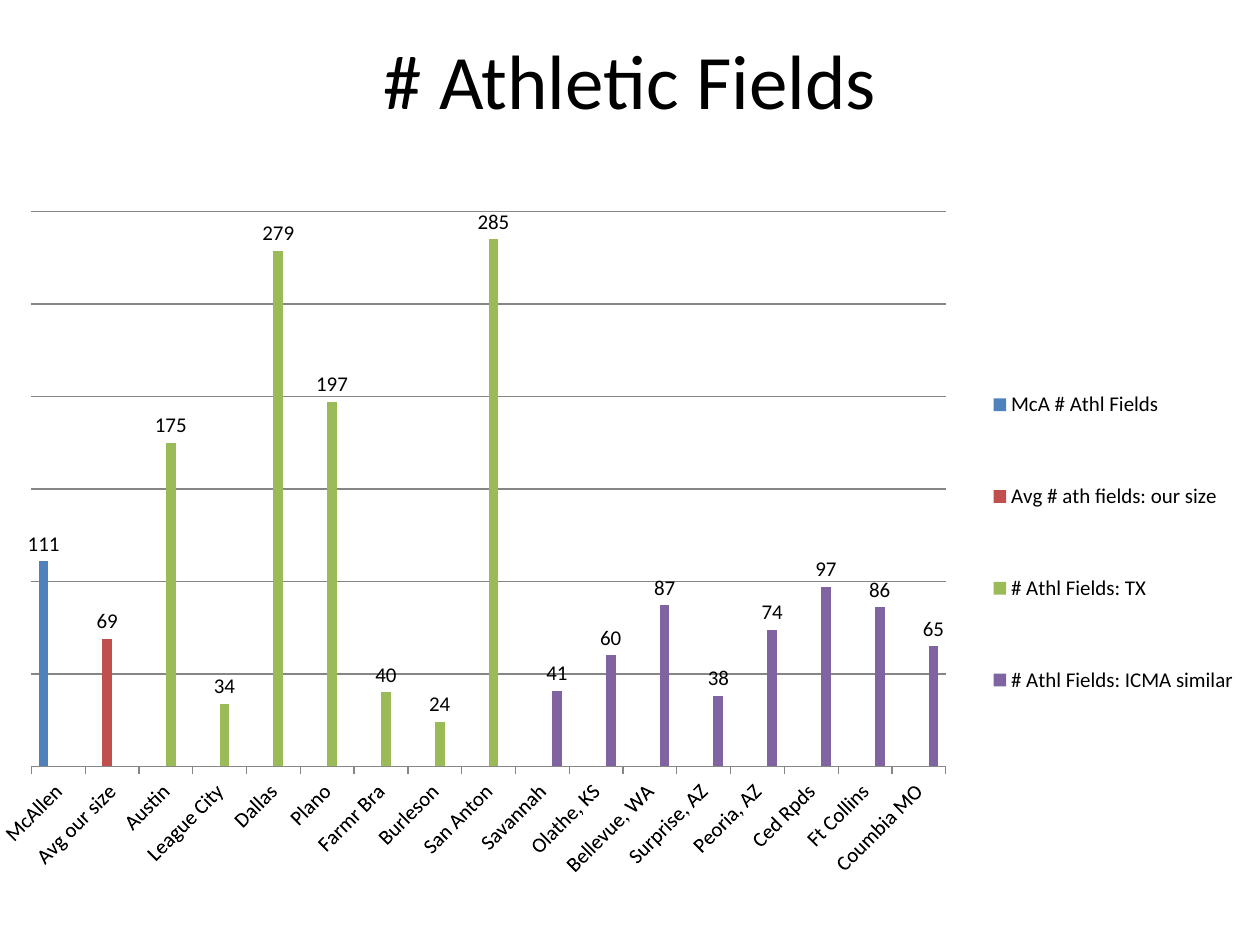
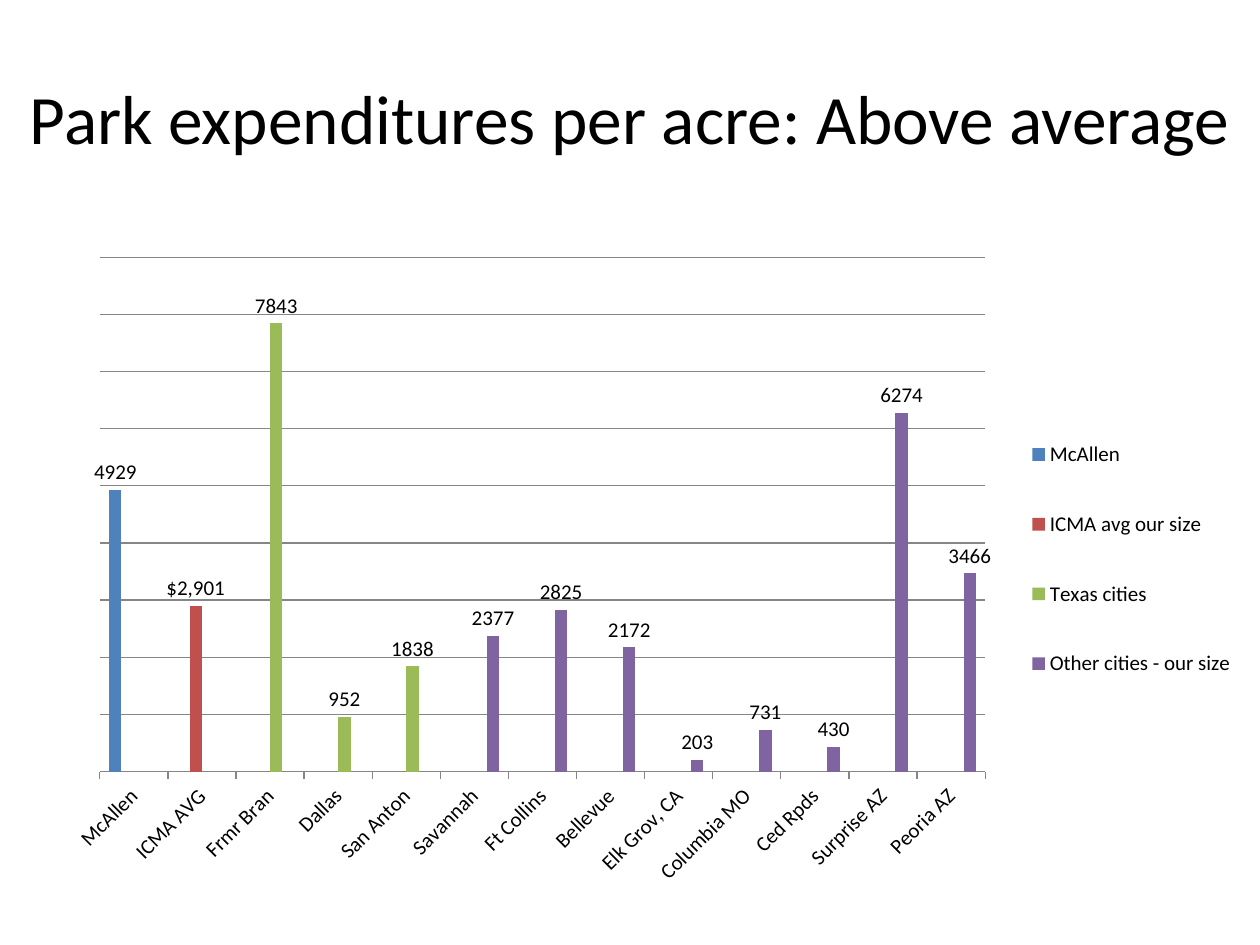
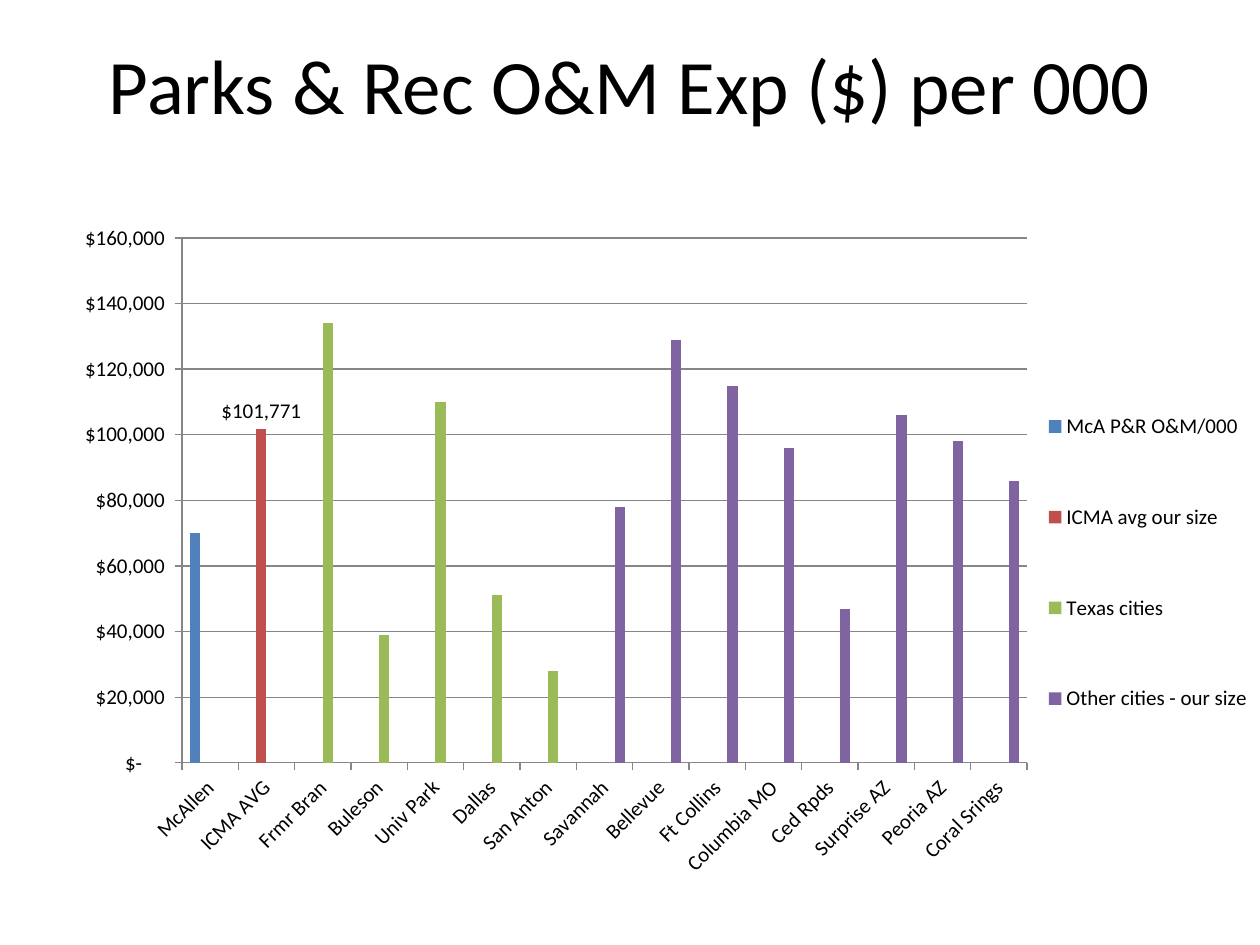
from dataclasses import dataclass

from lxml import etree
from pptx import Presentation
from pptx.chart.data import CategoryChartData
from pptx.dml.color import RGBColor
from pptx.enum.chart import (XL_CHART_TYPE, XL_LABEL_POSITION,
                             XL_LEGEND_POSITION, XL_TICK_MARK)
from pptx.enum.text import MSO_ANCHOR, PP_ALIGN
from pptx.oxml.ns import qn
from pptx.util import Pt


@dataclass(frozen=True)
class Theme:
    font: str = "Calibri"
    text: RGBColor = RGBColor(0, 0, 0)
    line: RGBColor = RGBColor(0x86, 0x86, 0x86)
    groups: tuple = tuple(map(RGBColor.from_string,
                              ("4F81BD", "C0504D", "9BBB59", "8064A2")))
    title: float = 44
    long_title: float = 39.6
    chart: float = 12


THEME = Theme()
DOLLARS = r'_("$"* #,##0_);_("$"* \(#,##0\);_("$"* "-"??_);_(@_)'

# Each group of cities is one series; boxes are left, top, width, height.
SLIDES = [
    dict(
        title="# Athletic Fields", size=THEME.title,
        title_box=(36, 0, 648, 90), chart_box=(0, 102, 720, 456),
        plot_box=(16, 19, 524, 317), legend_box=(560, 84, 152, 248),
        top=300, step=50, axis=False, formats=("General",) * 4,
        groups={
            "McA # Athl Fields": {"McAllen": 111},
            "Avg # ath fields: our size": {"Avg our size": 69},
            "# Athl Fields: TX": {
                "Austin": 175, "League City": 34, "Dallas": 279, "Plano": 197,
                "Farmr Bra": 40, "Burleson": 24, "San Anton": 285},
            "# Athl Fields: ICMA similar": {
                "Savannah": 41, "Olathe, KS": 60, "Bellevue, WA": 87,
                "Surprise, AZ": 38, "Peoria, AZ": 74, "Ced Rpds": 97,
                "Ft Collins": 86, "Coumbia MO": 65},
        }),
    dict(
        title="Park expenditures per acre: Above average", size=THEME.long_title,
        title_box=(0, 21.6, 720, 90), chart_box=(18, 126, 702, 414),
        plot_box=(39, 21, 506, 294), legend_box=(558, 101, 141, 185),
        top=9000, step=1000, axis=False,
        formats=("General", DOLLARS, "General", "General"),
        groups={
            "McAllen": {"McAllen": 4929},
            "ICMA avg our size": {"ICMA AVG": 2901},
            "Texas cities": {"Frmr Bran": 7843, "Dallas": 952, "San Anton": 1838},
            "Other cities - our size": {
                "Savannah": 2377, "Ft Collins": 2825, "Bellevue": 2172,
                "Elk Grov, CA": 203, "Columbia MO": 731, "Ced Rpds": 430,
                "Surprise AZ": 6274, "Peoria AZ": 3466},
        }),
    dict(
        title="Parks & Rec O&M Exp ($) per 000", size=THEME.title,
        title_box=(36, 0, 648, 96), chart_box=(0, 114, 720, 426),
        plot_box=(104, 22, 483, 300), legend_box=(592, 85, 128, 245),
        top=160000, step=20000, axis=True, formats=(None, DOLLARS, None, None),
        groups={
            "McA P&R O&M/000": {"McAllen": 70000},
            "ICMA avg our size": {"ICMA AVG": 101771},
            "Texas cities": {
                "Frmr Bran": 134000, "Buleson": 39000, "Univ Park": 110000,
                "Dallas": 51000, "San Anton": 28000},
            "Other cities - our size": {
                "Savannah": 78000, "Bellevue": 129000, "Ft Collins": 115000,
                "Columbia MO": 96000, "Ced Rpds": 47000, "Surprise AZ": 106000,
                "Peoria AZ": 98000, "Coral Srings": 86000},
        }),
]


def add_title(s, text, size, box):
    tf = s.shapes.add_textbox(*map(Pt, box)).text_frame
    tf.word_wrap = True
    tf.vertical_anchor = MSO_ANCHOR.MIDDLE
    p = tf.paragraphs[0]
    p.alignment = PP_ALIGN.CENTER
    r = p.add_run()
    r.text = text
    r.font.name, r.font.size = THEME.font, Pt(size)
    r.font.color.rgb = THEME.text


def set_layout(parent, index, box, chart_box, inner=False):
    """Fix a chart part at a box given in points within the chart."""
    for old in parent.findall(qn("c:layout")):
        parent.remove(old)
    layout = etree.Element(qn("c:layout"))
    manual = etree.SubElement(layout, qn("c:manualLayout"))
    _, _, width, height = chart_box
    settings = [("layoutTarget", "inner")] if inner else []
    settings += [("xMode", "edge"), ("yMode", "edge")]
    settings += [(key, f"{length / whole:.4f}") for key, length, whole
                 in zip("xywh", box, (width, height) * 2)]
    for key, value in settings:
        etree.SubElement(manual, qn(f"c:{key}")).set("val", value)
    parent.insert(index, layout)


def group_data(groups):
    """Line the groups up along one axis, with gaps outside each group."""
    data = CategoryChartData()
    data.categories = [city for group in groups.values() for city in group]
    count = len(data.categories)
    start = 0
    for name, group in groups.items():
        after = count - start - len(group)
        data.add_series(name, [None] * start + list(group.values()) + [None] * after)
        start += len(group)
    return data


def style_series(plot, formats):
    for series, color, number_format in zip(plot.series, THEME.groups, formats):
        series.format.fill.solid()
        series.format.fill.fore_color.rgb = color
        series.invert_if_negative = False
        if number_format:
            labels = series.data_labels
            labels.show_value = True
            labels.position = XL_LABEL_POSITION.OUTSIDE_END
            labels.number_format = number_format
            labels.number_format_is_linked = False


def style_axes(chart, top, step, visible):
    cities, values = chart.category_axis, chart.value_axis
    cities.major_tick_mark = values.major_tick_mark = XL_TICK_MARK.OUTSIDE
    cities.has_major_gridlines = False
    cities.tick_labels.font.size = Pt(THEME.chart)
    cities_body = cities._element.find(qn("c:txPr")).find(qn("a:bodyPr"))
    cities_body.set("rot", "-2700000")
    values.minimum_scale, values.maximum_scale = 0, top
    values.major_unit = step
    values.has_major_gridlines = True
    values.tick_labels.number_format = DOLLARS
    values.tick_labels.number_format_is_linked = False
    values.visible = visible
    for part in (cities, values, values.major_gridlines):
        part.format.line.color.rgb = THEME.line
        part.format.line.width = Pt(0.75)


def add_city_chart(s, spec_):
    box = spec_["chart_box"]
    chart = s.shapes.add_chart(XL_CHART_TYPE.COLUMN_CLUSTERED, *map(Pt, box),
                               group_data(spec_["groups"])).chart
    chart.has_title = False
    chart.font.name, chart.font.size = THEME.font, Pt(THEME.chart)
    chart.font.color.rgb = THEME.text
    plot = chart.plots[0]
    plot.gap_width, plot.overlap = 150, 0
    plot.vary_by_categories = False
    style_series(plot, spec_["formats"])
    style_axes(chart, spec_["top"], spec_["step"], spec_["axis"])
    chart.has_legend = True
    chart.legend.position = XL_LEGEND_POSITION.RIGHT
    chart.legend.include_in_layout = False
    plot_area = chart._chartSpace.chart.plotArea
    set_layout(plot_area, 0, spec_["plot_box"], box, inner=True)
    set_layout(chart.legend._element, 1, spec_["legend_box"], box)


def main():
    prs = Presentation()
    prs.slide_width, prs.slide_height = Pt(720), Pt(540)
    for content in SLIDES:
        s = prs.slides.add_slide(prs.slide_layouts[6])
        add_title(s, content["title"], content["size"], content["title_box"])
        add_city_chart(s, content)
    prs.save("out.pptx")


if __name__ == "__main__":
    main()
